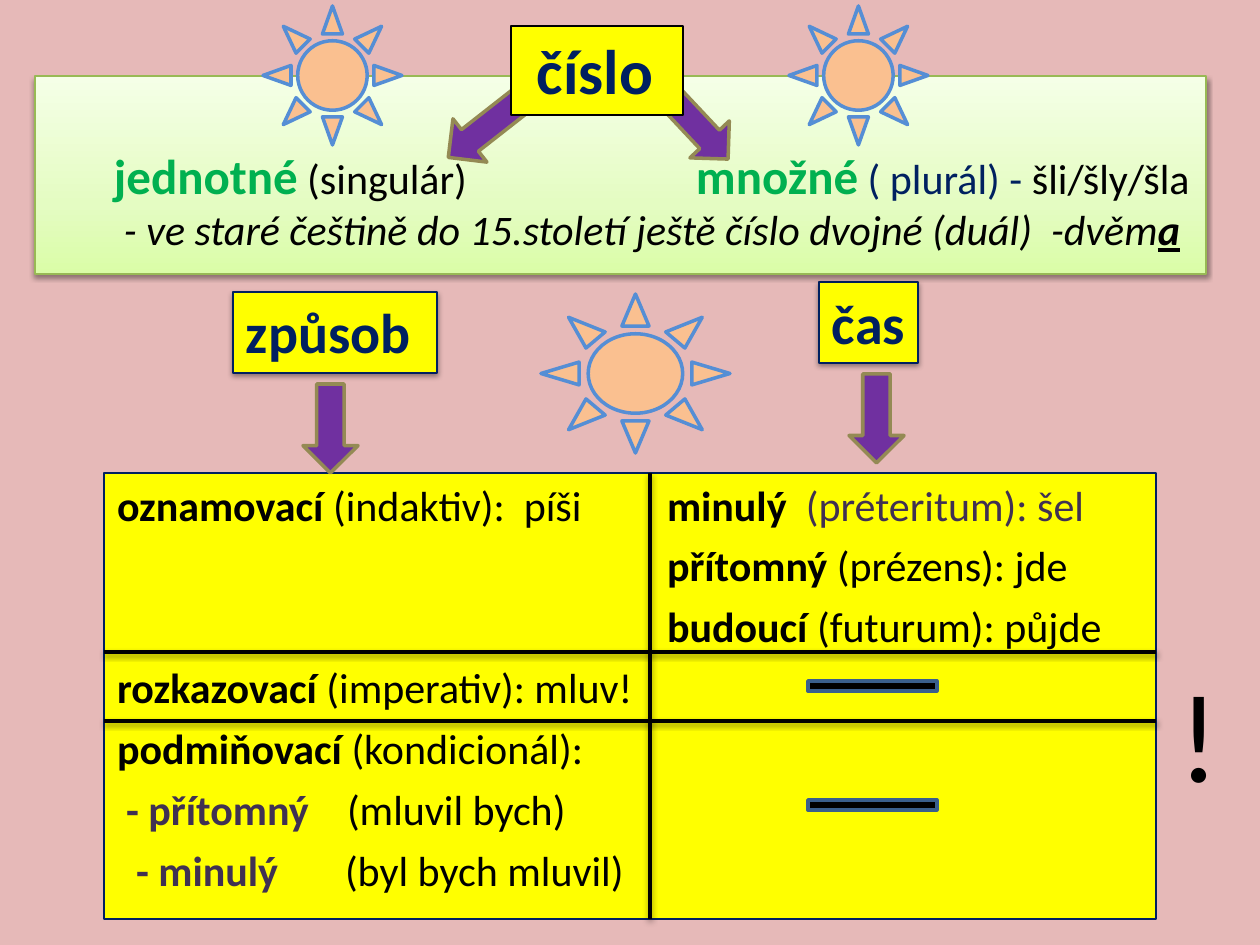
from copy import deepcopy

from lxml import etree
from pptx import Presentation
from pptx.dml.color import RGBColor
from pptx.enum.shapes import MSO_CONNECTOR, MSO_SHAPE
from pptx.enum.text import MSO_ANCHOR, PP_ALIGN
from pptx.oxml.ns import qn
from pptx.util import Pt

RECTANGLE, SUN, LEFT_ARROW = MSO_SHAPE.RECTANGLE, MSO_SHAPE.SUN, MSO_SHAPE.LEFT_ARROW
STRAIGHT = MSO_CONNECTOR.STRAIGHT
TOP, LEFT = MSO_ANCHOR.TOP, PP_ALIGN.LEFT
FONT = "Calibri"
PIXELS_PER_INCH = 126
COLORS = {
    "background": "E6B9B8", "yellow": "FFFF00", "navy": "002060", "black": "000000",
    "plum": "403152", "green": "00B050", "purple": "7030A0", "olive": "948A54",
    "peach": "FAC090", "sky": "558ED5", "steel": "3A5F8C", "leaf": "98B955",
}
PANEL_STOPS = [(0, "DAFDA7"), (0.35, "E4FCC2"), (1, "F5FFE7")]


def px(length):
    return round(length * 914400 / PIXELS_PER_INCH)


def rgb(name):
    return RGBColor.from_string(COLORS[name])


def set_effects(shape, shadow):
    """Replace the theme effects by a soft drop shadow or by nothing."""
    effects = etree.SubElement(shape.element.spPr, qn("a:effectLst"))
    if shadow:
        outer = etree.SubElement(effects, qn("a:outerShdw"), blurRad="40000",
                                 dist="20000", dir="5400000", rotWithShape="0")
        color = etree.SubElement(outer, qn("a:srgbClr"), val=COLORS["black"])
        etree.SubElement(color, qn("a:alpha"), val="38000")


def add_shape(slide, kind, box, fill, line, width=2, shadow=False, rotation=0):
    shape = slide.shapes.add_shape(kind, *map(px, box))
    shape.rotation = rotation
    shape.fill.solid()
    shape.fill.fore_color.rgb = rgb(fill)
    shape.line.color.rgb = rgb(line)
    shape.line.width = Pt(width)
    set_effects(shape, shadow)
    return shape


def add_arrow(slide, box, rotation):
    add_shape(slide, LEFT_ARROW, box, "purple", "olive", rotation=rotation)


def add_rule(slide, start, end):
    rule = slide.shapes.add_connector(STRAIGHT, *map(px, start + end))
    rule.line.color.rgb = rgb("black")
    rule.line.width = Pt(2)
    set_effects(rule, shadow=True)


def write(shape, lines, size, inset=(13, 6), spacing=0):
    """Fill a shape with lines of (tab stops, runs); a run is (text, color, font settings)."""
    frame = shape.text_frame
    frame.word_wrap = True
    frame.vertical_anchor = TOP
    frame.margin_left, frame.margin_top = map(px, inset)
    frame.margin_right = 0
    for index, (stops, runs) in enumerate(lines):
        paragraph = frame.add_paragraph() if index else frame.paragraphs[0]
        paragraph.alignment = LEFT
        if index:
            paragraph.space_before = Pt(spacing)
        if stops:
            properties = paragraph._p.get_or_add_pPr()
            tabs = etree.SubElement(properties, qn("a:tabLst"))
            for stop in stops:
                etree.SubElement(tabs, qn("a:tab"), pos=str(px(stop)), algn="l")
        paragraph.font.name = FONT
        paragraph.font.size = Pt(size)
        for text, color, settings in runs:
            run = paragraph.add_run()
            run.text = text
            run.font.color.rgb = rgb(color)
            for name, value in settings.items():
                setattr(run.font, name, value)


def add_label(slide, box, text, size, line="navy", inset=13, shadow=True):
    label = add_shape(slide, RECTANGLE, box, "yellow", line, 0.75, shadow)
    write(label, [((), [(text, "navy", {"bold": True})])], size, (inset, 6))


def add_heading(slide, box, text, arrow_left):
    """Label with an arrow pointing down from below it."""
    left, top, _, height = box
    add_label(slide, box, text, 32)
    add_arrow(slide, (left + arrow_left, top + height + 28, 89, 55), 270)


def add_overview(slide, box):
    """Grid of moods on the left and tenses on the right."""
    left, top, width, height = box
    bold = {"bold": True}

    def entry(term, rest, rest_color="black"):
        return [(term + " ", "black", bold), (rest, rest_color, {})]

    def variant(term, example):
        return [("\t- " + term, "plum", bold), ("\t" + example, "black", {})]

    tense = (550,)
    tab = [("\t", "black", {})]
    grid = add_shape(slide, RECTANGLE, box, "yellow", "navy", 0.75)
    write(grid, [
        (tense, entry("oznamovací", "(indaktiv): \u00a0píši".replace("\u00a0", " "))
         + tab + entry("minulý", " (préteritum): šel", "plum")),
        (tense, tab + entry("přítomný", "(prézens): jde")),
        (tense, tab + entry("budoucí", "(futurum): půjde")),
        ((), entry("rozkazovací", "(imperativ): mluv!")),
        ((), entry("podmiňovací", "(kondicionál):")),
        ((9, 230), variant("přítomný", "(mluvil bych)")),
        ((19, 228), variant("minulý", "(byl bych mluvil)")),
    ], 24, spacing=6)
    add_rule(slide, (left + 546, top), (left + 546, top + height))
    for offset in (179, 248):
        add_rule(slide, (left + width, top + offset), (left, top + offset))
    for offset in (208, 327):
        add_shape(slide, RECTANGLE, (left + 704, top + offset, 129, 10), "black", "steel")


def add_number_panel(slide, box):
    left, top, width, height = box
    panel = add_shape(slide, RECTANGLE, box, "yellow", "leaf", 0.75, shadow=True)
    panel.fill.gradient()
    panel.fill.gradient_angle = 90
    stop_list = panel.element.spPr.find(".//" + qn("a:gsLst"))
    stop_list.insert(1, deepcopy(stop_list[0]))
    for stop, (position, color) in zip(panel.fill.gradient_stops, PANEL_STOPS):
        stop.position = position
        stop.color.rgb = RGBColor.from_string(color)
    term = {"bold": True, "size": Pt(28)}
    write(panel, [
        ((66, 648), [("\tjednotné", "green", term), (" (singulár)\t", "black", {}),
                     ("množné", "green", term), (" ( plurál) -", "navy", {}),
                     (" šli/šly/šla", "black", {})]),
        ((76,), [("\t- ve staré češtině do 15.století ještě číslo dvojné (duál)  -dvěm",
                  "black", {"italic": True}),
                 ("a", "black", {"italic": True, "bold": True, "underline": True})]),
    ], 24, (13, 69))
    add_arrow(slide, (left + 403, top + 24, 97, 55), 321.9)
    add_arrow(slide, (left + 619, top + 24, 88, 54), 226.8)
    add_label(slide, (left + 476, top - 50, 172, 89), "číslo", 36, "black", 26, False)


def add_sun(slide, box):
    add_shape(slide, SUN, box, "peach", "sky")


def main():
    presentation = Presentation()
    presentation.slide_width, presentation.slide_height = px(1260), px(945)
    slide = presentation.slides.add_slide(presentation.slide_layouts[6])
    slide.background.fill.solid()
    slide.background.fill.fore_color.rgb = rgb("background")

    add_overview(slide, (104, 473, 1052, 446))
    add_heading(slide, (233, 292, 204, 81), "způsob", 53)
    add_heading(slide, (819, 282, 99, 81), "čas", 13)
    add_number_panel(slide, (35, 76, 1171, 198))
    for box in ((541, 294, 189, 159), (789, 6, 139, 139), (263, 6, 139, 139)):
        add_sun(slide, box)
    exclamation = slide.shapes.add_textbox(*map(px, (1166, 651, 59, 165)))
    write(exclamation, [((), [("!", "black", {})])], 72)

    presentation.save("out.pptx")


if __name__ == "__main__":
    main()
